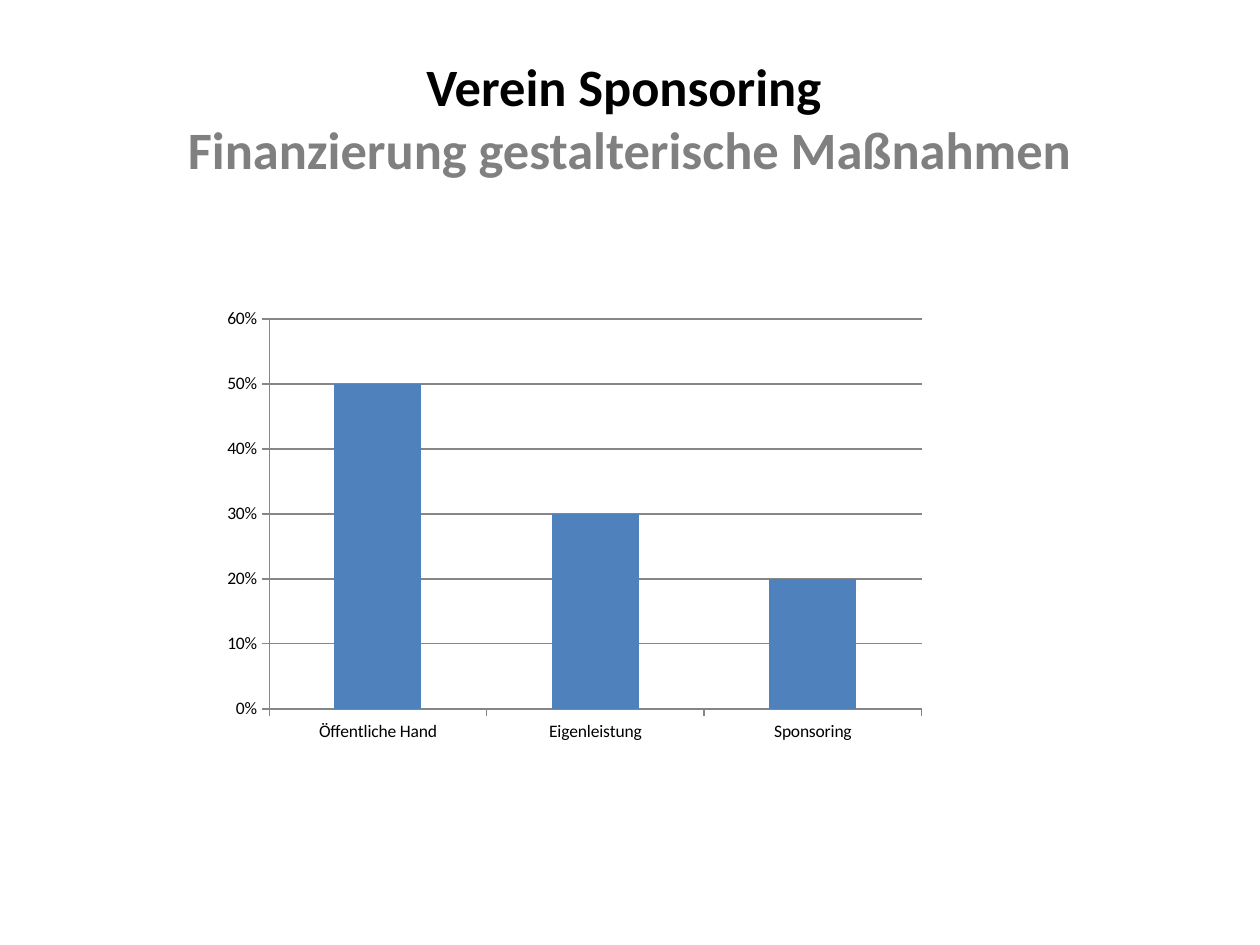
from pptx import Presentation
from pptx.chart.data import CategoryChartData
from pptx.dml.color import RGBColor
from pptx.enum.chart import XL_CHART_TYPE, XL_TICK_MARK
from pptx.enum.text import MSO_ANCHOR, PP_ALIGN
from pptx.util import Cm, Pt

FONT = "Calibri"
COLORS = {"text": "000000", "sub": "808080", "bar": "4F81BD", "line": "868686"}


def tint(name):
    return RGBColor.from_string(COLORS[name])


def style(font, size, color, bold=False):
    font.name = FONT
    font.size = Pt(size)
    font.bold = bold
    font.color.rgb = tint(color)


def add_run(para, text, color):
    run = para.add_run()
    run.text = text
    style(run.font, 30, color, True)


def add_title(slide, head, sub):
    box = slide.shapes.add_textbox(Cm(1.27), Cm(0.76), Cm(22.86), Cm(3.18))
    frame = box.text_frame
    frame.word_wrap = True
    frame.vertical_anchor = MSO_ANCHOR.MIDDLE
    para = frame.paragraphs[0]
    para.alignment = PP_ALIGN.CENTER
    add_run(para, head, "text")
    para.add_line_break()
    add_run(para, sub, "sub")


def style_axis(axis):
    axis.major_tick_mark = XL_TICK_MARK.OUTSIDE
    axis.minor_tick_mark = XL_TICK_MARK.NONE
    axis.format.line.color.rgb = tint("line")
    axis.format.line.width = Pt(0.75)


def add_bars(slide, shares):
    data = CategoryChartData(number_format="0%")
    data.categories = list(shares)
    data.add_series("Series 1", list(shares.values()))
    chart = slide.shapes.add_chart(
        XL_CHART_TYPE.COLUMN_CLUSTERED,
        Cm(4.29), Cm(6.05), Cm(14.58), Cm(9.07), data,
    ).chart
    chart.has_title = False
    chart.has_legend = False
    style(chart.font, 10, "text")

    plot = chart.plots[0]
    plot.vary_by_categories = False
    plot.gap_width = 150
    fill = plot.series[0].format.fill
    fill.solid()
    fill.fore_color.rgb = tint("bar")

    style_axis(chart.category_axis)
    value = chart.value_axis
    style_axis(value)
    value.minimum_scale = 0
    value.maximum_scale = 0.6
    value.major_unit = 0.1
    value.tick_labels.number_format = "0%"
    value.tick_labels.number_format_is_linked = False
    value.has_major_gridlines = True
    grid = value.major_gridlines.format.line
    grid.color.rgb = tint("line")
    grid.width = Pt(0.75)


def main():
    deck = Presentation()
    deck.slide_width = Cm(25.4)
    deck.slide_height = Cm(19.05)
    slide = deck.slides.add_slide(deck.slide_layouts[6])
    add_title(slide, "Verein Sponsoring ", "Finanzierung gestalterische Maßnahmen")
    add_bars(slide, {"Öffentliche Hand": 0.5, "Eigenleistung": 0.3, "Sponsoring": 0.2})
    deck.save("out.pptx")


if __name__ == "__main__":
    main()
